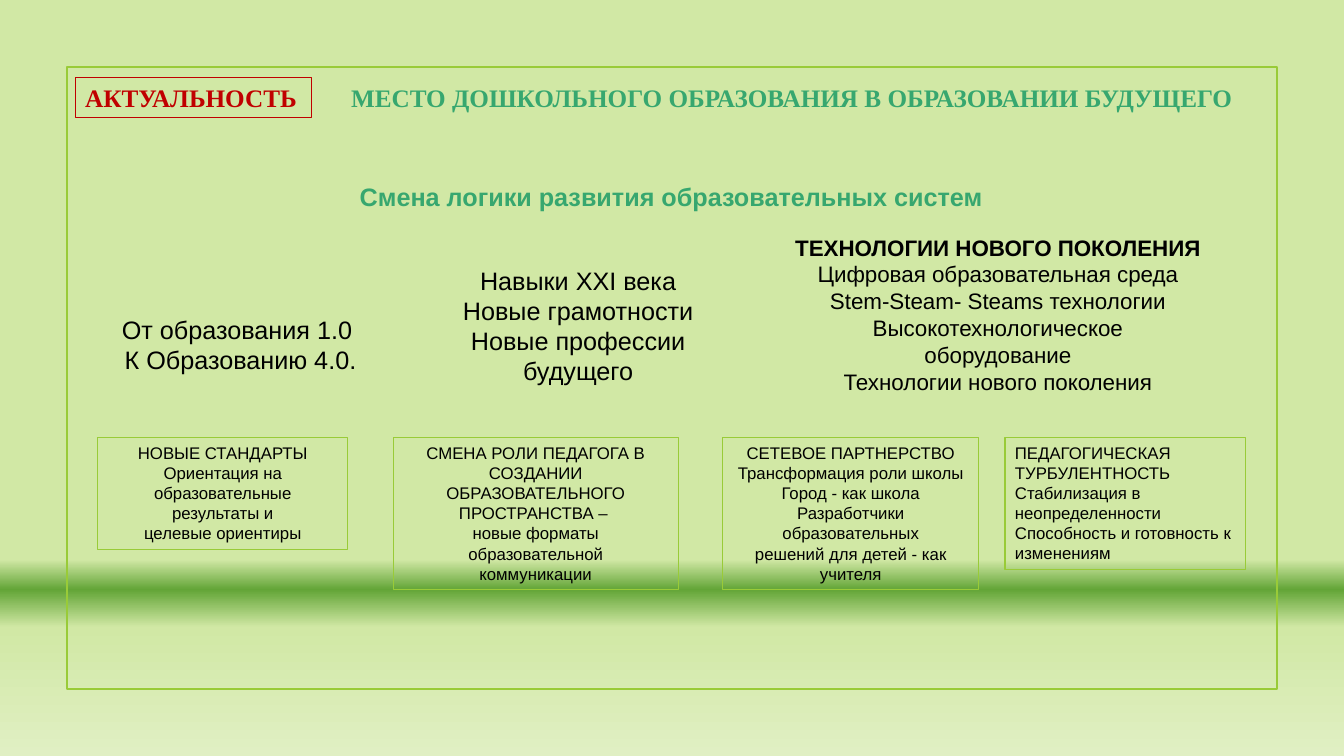
from copy import deepcopy
from dataclasses import dataclass

from lxml import etree
from pptx import Presentation
from pptx.dml.color import RGBColor
from pptx.enum.shapes import MSO_SHAPE
from pptx.enum.text import MSO_ANCHOR, MSO_AUTO_SIZE, PP_ALIGN
from pptx.oxml.ns import qn
from pptx.util import Inches, Pt

RECTANGLE = MSO_SHAPE.RECTANGLE
TOP = MSO_ANCHOR.TOP
GROW = MSO_AUTO_SIZE.SHAPE_TO_FIT_TEXT
LEFT, CENTER = PP_ALIGN.LEFT, PP_ALIGN.CENTER

WIDTH, HEIGHT = Inches(13.333), Inches(7.5)
COLUMN, ROW = WIDTH / 100, HEIGHT / 100


@dataclass(frozen=True)
class Theme:
    sans: str = "Arial"
    serif: str = "Times New Roman"
    ink: str = "000000"
    accent: str = "37A76F"
    alert: str = "C00000"
    border: str = "99CB38"
    heading: int = 18
    technology: int = 16
    card: int = 12
    thin: float = 0.75
    thick: float = 1.25
    background: tuple = ((74, "D1E8A5"), (78, "63A537"), (83, "D1E8A5"), (100, "E0EFC3"))


THEME = Theme()


def font_format(size, name=THEME.sans, bold=False):
    return {"size": Pt(size), "name": name, "bold": bold}


HEADLINE = font_format(THEME.heading, THEME.serif, True)
SUBTITLE = font_format(THEME.heading, bold=True)
TOPIC = font_format(THEME.heading)
TECHNOLOGY = font_format(THEME.technology)
CARD = font_format(THEME.card)

CARD_TOP = 57.87
CARDS = [
    (7.28, 18.6, 14.8, CENTER, [
        "НОВЫЕ СТАНДАРТЫ",
        "Ориентация на\nобразовательные\nрезультаты и\nцелевые ориентиры"]),
    (29.25, 21.23, 20.13, CENTER, [
        "СМЕНА РОЛИ ПЕДАГОГА В СОЗДАНИИ\nОБРАЗОВАТЕЛЬНОГО\nПРОСТРАНСТВА – ",
        "новые форматы\nобразовательной\nкоммуникации"]),
    (53.78, 19.05, 20.13, CENTER, [
        "СЕТЕВОЕ ПАРТНЕРСТВО",
        "Трансформация роли школы\nГород - как школа\n"
        "Разработчики образовательных\nрешений для детей - как учителя"]),
    (74.78, 17.93, 17.47, LEFT, [
        "ПЕДАГОГИЧЕСКАЯ ТУРБУЛЕНТНОСТЬ",
        "Стабилизация в неопределенности\nСпособность и готовность к\nизменениям"]),
]


def place(left, top, width, height):
    return [round(length) for length in
            (left * COLUMN, top * ROW, width * COLUMN, height * ROW)]


def set_attributes(target, values):
    for name, value in values.items():
        setattr(target, name, value)


def paint_background(slide):
    fill = slide.background.fill
    fill.gradient()
    fill.gradient_angle = 270
    stops = slide.element.find(".//" + qn("a:gsLst"))
    for stop in list(stops):
        stops.remove(stop)
    for position, color in THEME.background:
        stop = etree.SubElement(stops, qn("a:gs"), pos=str(position * 1000))
        etree.SubElement(stop, qn("a:srgbClr"), val=color)


def add_outline(slide, cell, color, width):
    shape = slide.shapes.add_shape(RECTANGLE, *place(*cell))
    shape.shadow.inherit = False
    shape.fill.background()
    shape.line.color.rgb = RGBColor.from_string(color)
    shape.line.width = Pt(width)
    return shape


def write_paragraph(paragraph, text, style, color, alignment):
    paragraph.text = text
    paragraph.alignment = alignment
    for run in paragraph.runs:
        set_attributes(run.font, style)
        run.font.color.rgb = RGBColor.from_string(color)
    run_format = paragraph.runs[0].font
    for line_break in paragraph.runs[0]._r.getparent().findall(qn("a:br")):
        line_break.append(deepcopy(paragraph.runs[0]._r.find(qn("a:rPr"))))
    return run_format


def write_text(shape, texts, style, color=THEME.ink, alignment=CENTER, wrap=True):
    frame = shape.text_frame
    set_attributes(frame, {"word_wrap": wrap, "auto_size": GROW, "vertical_anchor": TOP})
    fonts = []
    for index, text in enumerate(texts):
        paragraph = frame.add_paragraph() if index else frame.paragraphs[0]
        fonts.append(write_paragraph(paragraph, text, style, color, alignment))
    return fonts


def add_label(slide, cell, texts, style, **options):
    return write_text(slide.shapes.add_textbox(*place(*cell)), texts, style, **options)


def add_box(slide, cell, texts, style, border=THEME.border, **options):
    write_text(add_outline(slide, cell, border, THEME.thin), texts, style, **options)


def main():
    presentation = Presentation()
    set_attributes(presentation, {"slide_width": WIDTH, "slide_height": HEIGHT})
    slide = presentation.slides.add_slide(presentation.slide_layouts[6])
    paint_background(slide)
    add_outline(slide, (5, 8.9, 90, 82.3), THEME.border, THEME.thick)

    add_box(slide, (5.6, 10.2, 17.55, 5.4), ["АКТУАЛЬНОСТЬ"], HEADLINE,
            border=THEME.alert, color=THEME.alert, alignment=LEFT)
    add_label(slide, (23.48, 10.2, 70.88, 5.4),
              ["МЕСТО ДОШКОЛЬНОГО ОБРАЗОВАНИЯ В ОБРАЗОВАНИИ БУДУЩЕГО"],
              HEADLINE, color=THEME.accent)
    add_label(slide, (26.03, 23.33, 48.38, 5.4),
              ["Смена логики развития образовательных систем"],
              SUBTITLE, color=THEME.accent, alignment=LEFT, wrap=False)

    technology_fonts = add_label(slide, (57.98, 30.27, 32.55, 22.93), [
        "ТЕХНОЛОГИИ НОВОГО ПОКОЛЕНИЯ",
        "Цифровая образовательная среда\nStem-Steam- Steams технологии\n"
        "Высокотехнологическое\nоборудование\nТехнологии нового поколения"], TECHNOLOGY)
    technology_fonts[0].bold = True
    add_label(slide, (7.73, 40.93, 20.33, 9.47),
              ["От образования 1.0 ", "К Образованию 4.0."], TOPIC)
    add_label(slide, (32.85, 34.4, 20.33, 17.47),
              ["Навыки XXI века\nНовые грамотности\nНовые профессии\nбудущего"], TOPIC)

    for left, width, height, alignment, texts in CARDS:
        add_box(slide, (left, CARD_TOP, width, height), texts, CARD, alignment=alignment)

    presentation.save("out.pptx")


if __name__ == "__main__":
    main()
